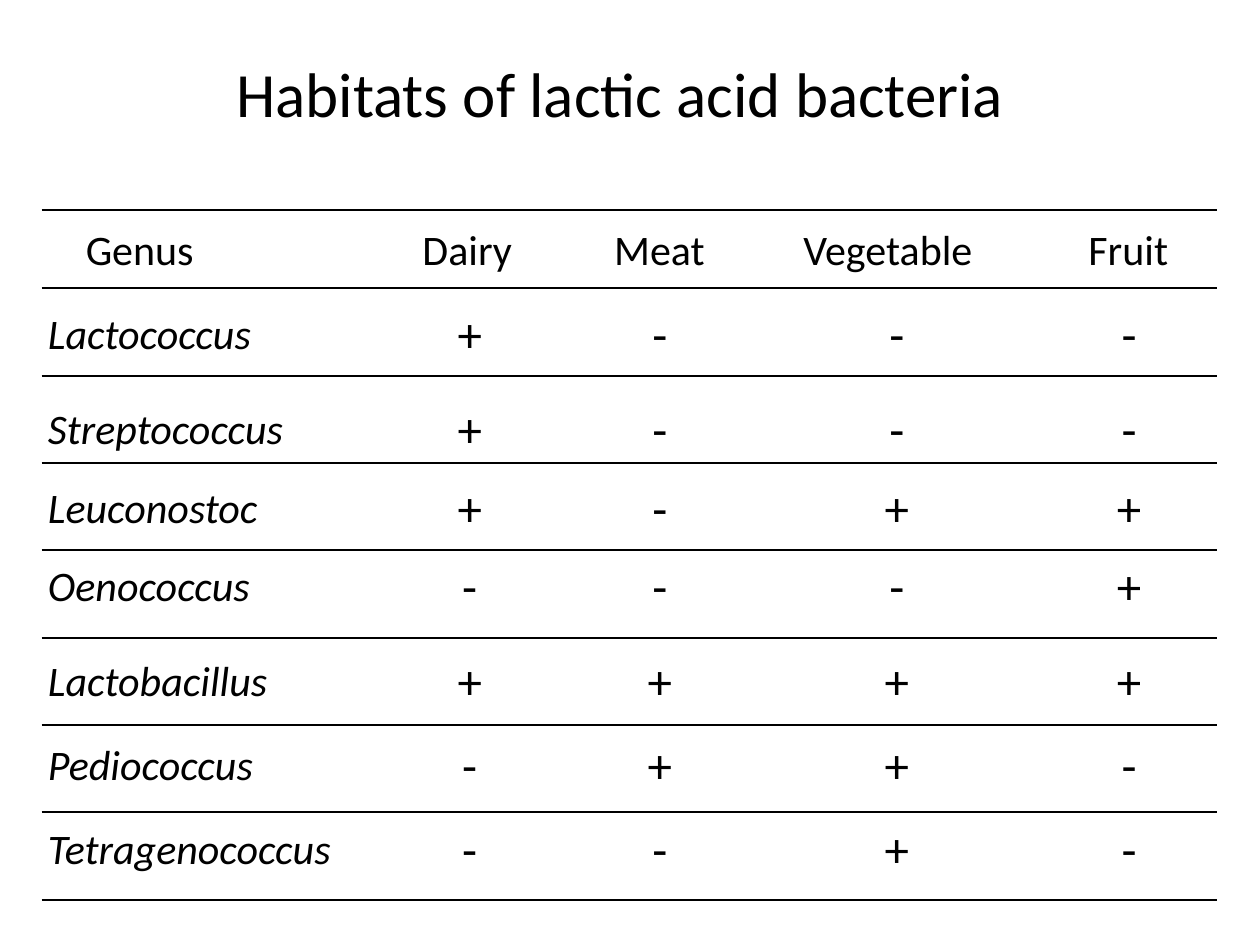
from lxml import etree
from pptx import Presentation
from pptx.dml.color import RGBColor
from pptx.enum.shapes import MSO_CONNECTOR
from pptx.enum.text import PP_ALIGN
from pptx.oxml.ns import qn
from pptx.util import Pt

LEFT, CENTER = PP_ALIGN.LEFT, PP_ALIGN.CENTER
STRAIGHT = MSO_CONNECTOR.STRAIGHT
FONT = "Calibri"
BLACK = "000000"

# Habitat, space to the right of its heading in points
HABITATS = [("Dairy", 4.6), ("Meat", 2.2), ("Vegetable", 12), ("Fruit", 2.8)]
# Genus, signs per habitat, space above the signs in points
GENERA = [
    ("Lactococcus", "+---", 9.8),
    ("Streptococcus", "+---", 14.2),
    ("Leuconostoc", "+-++", 9.5),
    ("Oenococcus", "---+", 4.5),
    ("Lactobacillus", "++++", 8.8),
    ("Pediococcus", "-++-", 6.6),
    ("Tetragenococcus", "--+-", 4.8),
]
COLUMN_WIDTHS = [188.7, 113.6, 103.8, 167, 98.6]
HEADER_HEIGHT = 44.6
HEADER_SPACE = 9
GENUS_DROP = 2.2  # lowers the smaller genus text to the signs' baseline
SIGN_RIGHT = 1.8


def color(hex_string):
    return RGBColor.from_string(hex_string)


def write(text_frame, text, size, alignment=LEFT, italic=False):
    paragraph = text_frame.paragraphs[0]
    paragraph.text = text
    paragraph.alignment = alignment
    font = paragraph.runs[0].font
    font.name = FONT
    font.size = Pt(size)
    font.bold = False
    font.italic = italic
    font.color.rgb = color(BLACK)


def clear_cell(cell):
    """Remove borders and fill; borders must precede the fill."""
    properties = cell._tc.get_or_add_tcPr()
    for tag in ("a:lnL", "a:lnR", "a:lnT", "a:lnB"):
        line = etree.SubElement(properties, qn(tag))
        etree.SubElement(line, qn("a:noFill"))
    cell.fill.background()


def fill_cell(cell, text, size, top, left=0, right=0, alignment=CENTER, italic=False):
    cell.margin_left = Pt(left)
    cell.margin_top = Pt(top)
    cell.margin_right = Pt(right)
    cell.margin_bottom = 0
    write(cell.text_frame, text, size, alignment, italic)


def add_title(slide, left, top, width, height):
    text_box = slide.shapes.add_textbox(Pt(left), Pt(top), Pt(width), Pt(height))
    text_frame = text_box.text_frame
    text_frame.word_wrap = False
    text_frame.margin_left = Pt(14.7)
    write(text_frame, "Habitats of lactic acid bacteria", 36)


def add_habitat_table(slide, left, top, width, height):
    frame = slide.shapes.add_table(len(GENERA) + 1, len(COLUMN_WIDTHS),
                                   Pt(left), Pt(top), Pt(width), Pt(height))
    table = frame.table
    table.first_row = False
    table.horz_banding = False

    for column, share in zip(table.columns, COLUMN_WIDTHS):
        column.width = Pt(share * width / sum(COLUMN_WIDTHS))
    row_height = (height - HEADER_HEIGHT) / len(GENERA)
    for index, row in enumerate(table.rows):
        row.height = Pt(row_height if index else HEADER_HEIGHT)
        for cell in row.cells:
            clear_cell(cell)

    fill_cell(table.cell(0, 0), "Genus", 24, HEADER_SPACE, left=25.2, alignment=LEFT)
    for column, (habitat, right) in enumerate(HABITATS, start=1):
        fill_cell(table.cell(0, column), habitat, 24, HEADER_SPACE, right=right)
    for row, (genus, signs, space) in enumerate(GENERA, start=1):
        fill_cell(table.cell(row, 0), genus, 24, space + GENUS_DROP,
                  left=3.6, alignment=LEFT, italic=True)
        for column, sign in enumerate(signs, start=1):
            fill_cell(table.cell(row, column), sign, 28, space, right=SIGN_RIGHT)


def add_row_rules(slide, left, top, width, height):
    row_height = (height - HEADER_HEIGHT) / len(GENERA)
    header_bottom = top + HEADER_HEIGHT
    levels = [top] + [header_bottom + row_height * row for row in range(len(GENERA) + 1)]
    for level in levels:
        rule = slide.shapes.add_connector(STRAIGHT, Pt(left), Pt(level),
                                          Pt(left + width), Pt(level))
        rule.line.color.rgb = color(BLACK)
        rule.line.width = Pt(1.25)
        etree.SubElement(rule._element.spPr, qn("a:effectLst"))


def main():
    presentation = Presentation()
    presentation.slide_width = Pt(720)
    presentation.slide_height = Pt(540)
    slide = presentation.slides.add_slide(presentation.slide_layouts[6])
    add_title(slide, 120.2, 27.4, 512.6, 50.4)
    table_box = (23.8, 120.2, 671.7, 393.9)
    add_habitat_table(slide, *table_box)
    add_row_rules(slide, *table_box)
    presentation.save("out.pptx")


if __name__ == "__main__":
    main()
